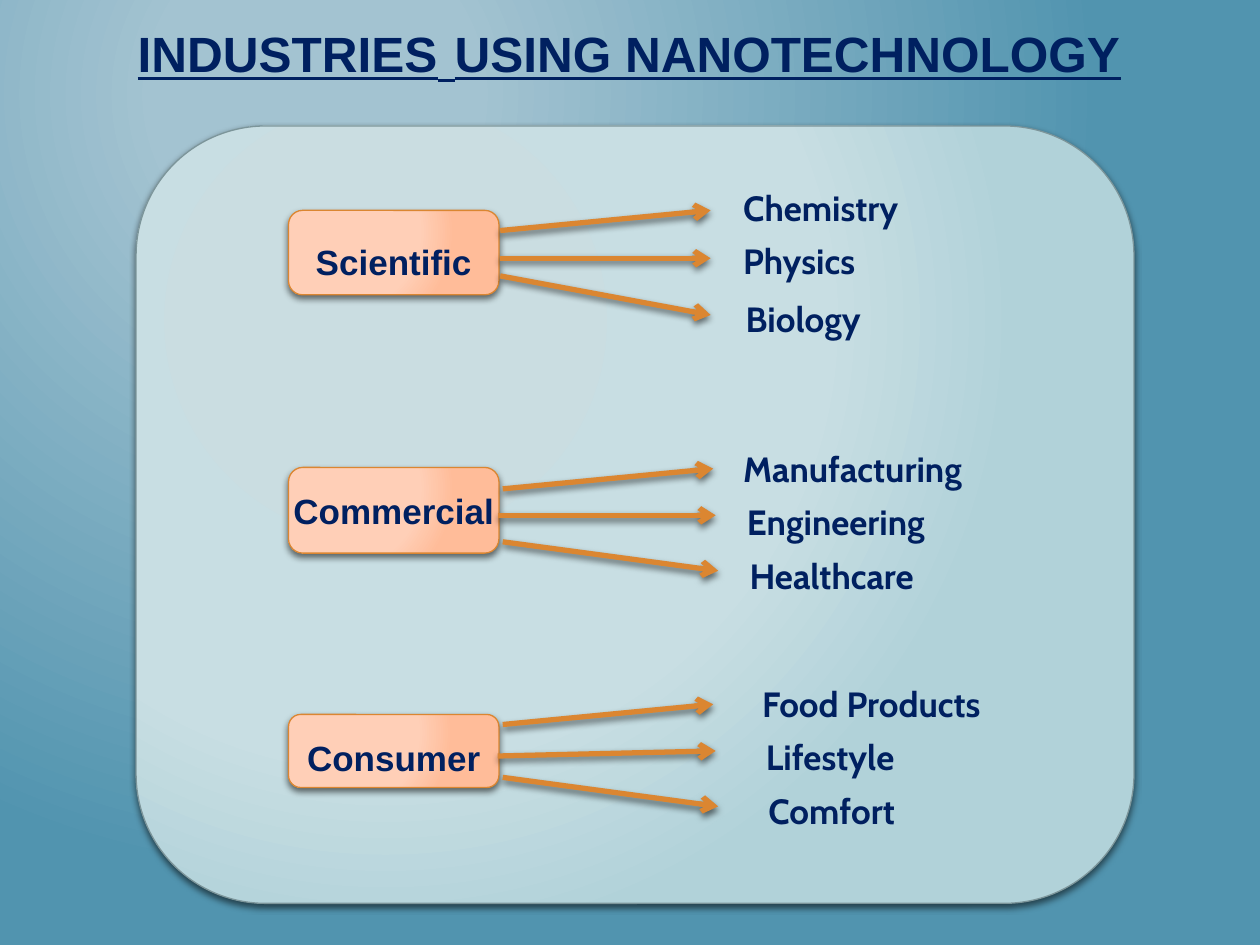
import pptx
import pptx.util
import pptx.dml.color
import pptx.enum.shapes
import pptx.enum.text
import pptx.oxml
import pptx.oxml.ns

Inches, Pt = pptx.util.Inches, pptx.util.Pt
RGB = pptx.dml.color.RGBColor.from_string
ROUND = pptx.enum.shapes.MSO_SHAPE.ROUNDED_RECTANGLE
STRAIGHT = pptx.enum.shapes.MSO_CONNECTOR.STRAIGHT
ALIGN, ANCHOR = pptx.enum.text.PP_ALIGN, pptx.enum.text.MSO_ANCHOR

# Content
TITLE = ["INDUSTRIES", " ", "USING NANOTECHNOLOGY"]
# box: top, height, drop of the label below centre
# items: text, left, top; arrows: x1, y1, x2, y2
GROUPS = [
    dict(name="Scientific", box=(1.67, 0.67, 0.07),
         items=[("Chemistry", 5.8, 1.43), ("Physics", 5.8, 1.85),
                ("Biology", 5.82, 2.31)],
         arrows=[(3.97, 1.83, 5.64, 1.67), (3.97, 2.05, 5.64, 2.05),
                 (3.97, 2.19, 5.64, 2.5)]),
    dict(name="Commercial", box=(3.71, 0.68, 0),
         items=[("Manufacturing", 5.8, 3.5), ("Engineering", 5.83, 3.92),
                ("Healthcare", 5.85, 4.35)],
         arrows=[(3.99, 3.88, 5.66, 3.72), (3.95, 4.09, 5.68, 4.09),
                 (3.99, 4.3, 5.7, 4.53)]),
    dict(name="Consumer", box=(5.67, 0.58, 0.05),
         items=[("Food Products", 5.95, 5.37), ("Lifestyle", 5.98, 5.79),
                ("Comfort", 6, 6.22)],
         arrows=[(3.99, 5.75, 5.66, 5.59), (3.95, 6, 5.68, 5.96),
                 (3.99, 6.17, 5.7, 6.4)]),
]

THEME = dict(
    ink="002060", edge="7C959A", accent="DB8631",
    head="Arial", body="Cabin", big=28.3, gap=42.9, text=20,
    back=[(20, "A3C3D1"), (100, "5194AF")],
    panel=[(0, "CADDE1"), (35, "CADDE1"), (69, "C8DEE3"), (100, "B1D2D9")],
    box=[(0, "FFCFB7"), (69, "FFCFB7"), (100, "FFBC99")],
)


# Helpers
def add_xml(parent, body):
    node = pptx.oxml.parse_xml(
        body.replace(" ", f" {pptx.oxml.ns.nsdecls('a')} ", 1))
    parent.append(node)
    return node


def shade(fill, node, stops, top=50):
    """Give a fill a round gradient in place of a solid colour."""
    fill.solid()
    old = node.find(pptx.oxml.ns.qn("a:solidFill"))
    marks = "".join(f'<a:gs pos="{pos * 1000}"><a:srgbClr val="{tint}"/></a:gs>'
                    for pos, tint in stops)
    grad = add_xml(node, f'<a:gradFill rotWithShape="1"><a:gsLst>{marks}</a:gsLst>'
                   f'<a:path path="circle"><a:fillToRect l="50000" t="{top * 1000}" '
                   'r="100000" b="100000"/></a:path></a:gradFill>')
    node.replace(old, grad)


def shadow(shape):
    add_xml(shape._element.spPr,
            f'<a:effectLst ><a:outerShdw blurRad="{Pt(4)}" dist="{Pt(2)}" '
            'dir="5400000" rotWithShape="0"><a:srgbClr val="000000">'
            '<a:alpha val="55000"/></a:srgbClr></a:outerShdw></a:effectLst>')


def stroke(shape, tint, width):
    shape.line.color.rgb = RGB(tint)
    shape.line.width = Pt(width)


def write(para, text, font=THEME["head"], size=THEME["text"], line=None,
          align=ALIGN.LEFT):
    para.alignment = align
    run = para.add_run()
    run.text = text
    run.font.name, run.font.size = font, Pt(size)
    run.font.bold, run.font.underline = True, line
    run.font.color.rgb = RGB(THEME["ink"])


def card(left, top, width, height, stops, edge):
    shape = slide.shapes.add_shape(ROUND, *map(Inches, (left, top, width, height)))
    shade(shape.fill, shape._element.spPr, stops)
    stroke(shape, edge, 0.75)
    shadow(shape)
    return shape


def arrow(*ends):
    link = slide.shapes.add_connector(STRAIGHT, *map(Inches, ends))
    stroke(link, THEME["accent"], 3)
    add_xml(link.line._get_or_add_ln(), '<a:tailEnd type="arrow"/>')
    shadow(link)


# Slide and background
deck = pptx.Presentation()
deck.slide_width, deck.slide_height = Inches(10), Inches(7.5)
slide = deck.slides.add_slide(deck.slide_layouts[5])
fill = slide.background.fill
fill.solid()
shade(fill, slide.element.xpath(".//p:bgPr")[0], THEME["back"], top=20)

# Title
title = slide.shapes.title
title.left, title.top = Inches(0.58), Inches(-0.08)
title.width, title.height = Inches(8.83), Inches(0.84)
frame = title.text_frame
frame.vertical_anchor = ANCHOR.MIDDLE
for part in TITLE:
    style = (dict(size=THEME["big"]) if part.strip()
             else dict(font=THEME["body"], size=THEME["gap"]))
    write(frame.paragraphs[0], part, line=True, align=ALIGN.CENTER, **style)

# Panel
card(1.08, 1, 7.92, 6.17, THEME["panel"], THEME["edge"])

# Groups: box, arrows, items
for group in GROUPS:
    top, height, drop = group["box"]
    box = card(2.29, top, 1.67, height, THEME["box"], THEME["accent"])
    frame = box.text_frame
    frame.word_wrap = False
    frame.vertical_anchor = ANCHOR.MIDDLE
    frame.margin_left = frame.margin_right = frame.margin_bottom = 0
    frame.margin_top = Inches(2 * drop)
    write(frame.paragraphs[0], group["name"], align=ALIGN.CENTER)
    for ends in group["arrows"]:
        arrow(*ends)
    for text, left, top in group["items"]:
        label = slide.shapes.add_textbox(*map(Inches, (left, top, 2.42, 0.44)))
        label.text_frame.word_wrap = True
        write(label.text_frame.paragraphs[0], text, font=THEME["body"])

deck.save("out.pptx")
